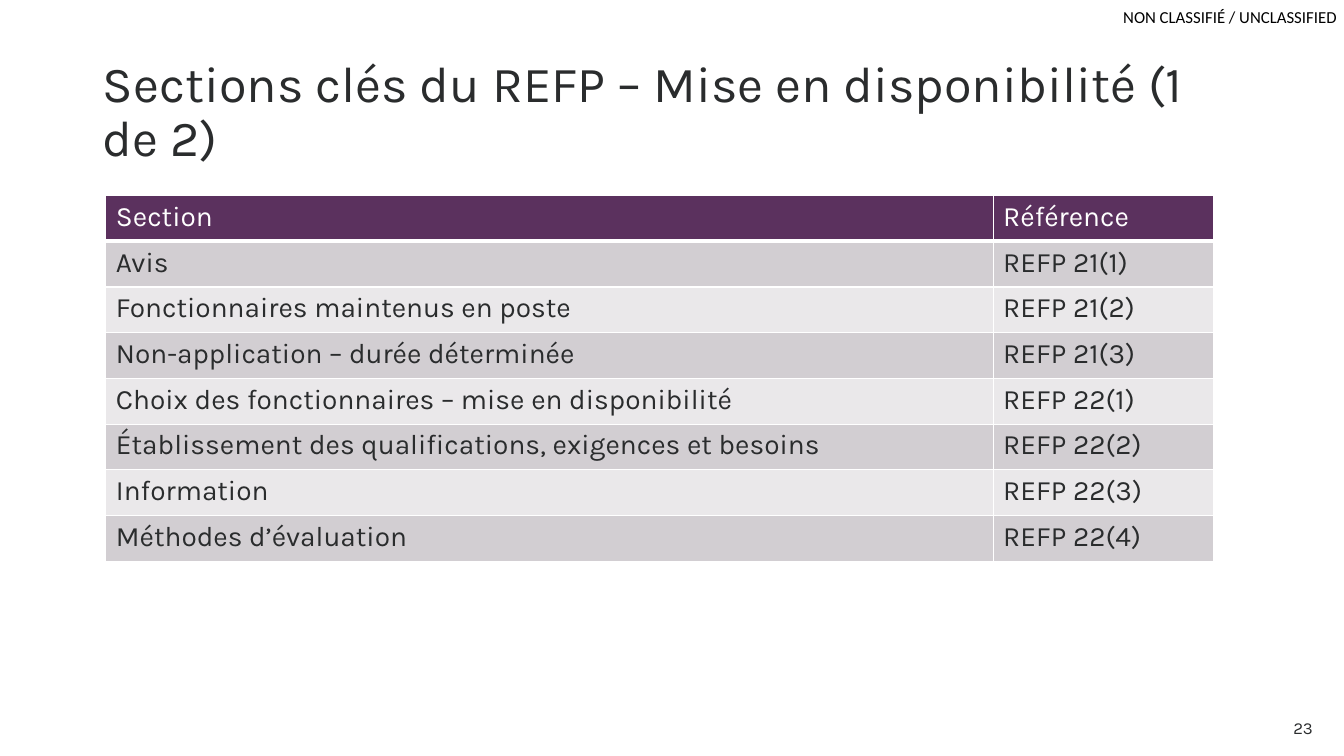
"""Build the slide listing the key REFP sections on lay-off."""
from lxml import etree
from pptx import Presentation, util as u
from pptx.dml.color import RGBColor
from pptx.enum import text as t
from pptx.oxml.ns import qn

PX = 9144
INK = RGBColor(0x2A, 0x2C, 0x2D)
BLACK = RGBColor(0, 0, 0)
WHITE = RGBColor(255, 255, 255)
PLUM = RGBColor(0x5B, 0x31, 0x5E)
DARK = RGBColor(0xD2, 0xCE, 0xD2)
LIGHT = RGBColor(0xEA, 0xE8, 0xEA)


def write(frame, words, size=20, color=INK, face="Karla", align=t.PP_ALIGN.LEFT,
          anchor=t.MSO_ANCHOR.MIDDLE, space=1.0):
    frame.word_wrap = True
    frame.vertical_anchor = anchor
    para = frame.paragraphs[0]
    para.alignment = align
    para.line_spacing = space
    run = para.add_run()
    run.text = words
    font = run.font
    font.name, font.size, font.bold = face, u.Pt(size), False
    font.color.rgb = color


def edge(cell, side, width):
    line = etree.SubElement(cell._tc.get_or_add_tcPr(), qn("a:" + side), w=str(u.Pt(width)))
    fill = etree.SubElement(line, qn("a:solidFill"))
    etree.SubElement(fill, qn("a:srgbClr"), val=str(WHITE))


prs = Presentation()
prs.slide_width, prs.slide_height = 1333 * PX, 750 * PX
slide = prs.slides.add_slide(prs.slide_layouts[5])

label = slide.shapes.add_textbox(1114 * PX, 7 * PX, 216 * PX, 20 * PX).text_frame
label.margin_left = label.margin_right = label.margin_top = label.margin_bottom = 0
write(label, "NON CLASSIFIÉ / UNCLASSIFIED", size=12, color=BLACK, face="Calibri",
      anchor=t.MSO_ANCHOR.TOP)

title = slide.shapes.title
title.left, title.top, title.width, title.height = 92 * PX, 40 * PX, 1150 * PX, 145 * PX
title.text_frame.auto_size = t.MSO_AUTO_SIZE.NONE
write(title.text_frame, "Sections clés du REFP – Mise en disponibilité (1 de 2)",
      size=36, space=0.9)

rows = [
    ("Section", "Référence"),
    ("Avis", "REFP 21(1)"),
    ("Fonctionnaires maintenus en poste", "REFP 21(2)"),
    ("Non-application – durée déterminée", "REFP 21(3)"),
    ("Choix des fonctionnaires – mise en disponibilité", "REFP 22(1)"),
    ("Établissement des qualifications, exigences et besoins", "REFP 22(2)"),
    ("Information", "REFP 22(3)"),
    ("Méthodes d’évaluation", "REFP 22(4)"),
]
table = slide.shapes.add_table(len(rows), 2, 105 * PX, 194 * PX, 1099 * PX, 363 * PX).table
table.horz_banding = False
table.columns[0].width, table.columns[1].width = 880 * PX, 219 * PX

for r, row in enumerate(rows):
    for c, words in enumerate(row):
        cell = table.cell(r, c)
        write(cell.text_frame, words, color=INK if r else WHITE, anchor=t.MSO_ANCHOR.TOP)
        edge(cell, "lnL", 1)
        edge(cell, "lnR", 1)
        edge(cell, "lnT", 3 if r == 1 else 1)
        edge(cell, "lnB", 3 if r == 0 else 1)
        cell.fill.solid()
        cell.fill.fore_color.rgb = (DARK if r % 2 else LIGHT) if r else PLUM

page = slide.shapes.add_textbox(1181 * PX, 702 * PX, 131 * PX, 40 * PX).text_frame
write(page, "23", size=12, align=t.PP_ALIGN.RIGHT)

prs.save("out.pptx")
